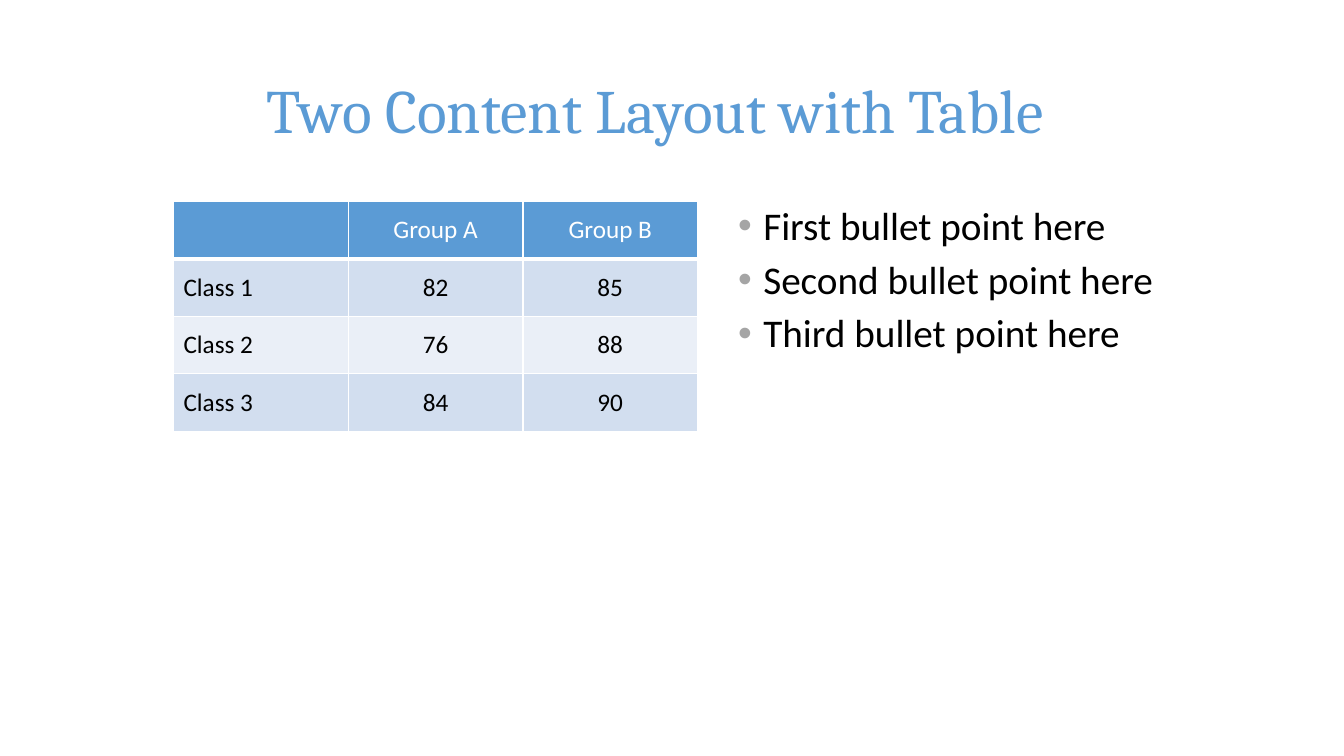
from lxml import etree
from pptx import Presentation
from pptx.dml.color import RGBColor
from pptx.enum.text import MSO_ANCHOR, MSO_AUTO_SIZE, PP_ALIGN
from pptx.oxml.ns import qn
from pptx.util import Inches, Pt

LEFT, CENTER = PP_ALIGN.LEFT, PP_ALIGN.CENTER
MIDDLE, TOP = MSO_ANCHOR.MIDDLE, MSO_ANCHOR.TOP
NO_AUTOFIT = MSO_AUTO_SIZE.NONE

COLORS = {
    "accent": "5B9BD5",
    "band_dark": "D2DEEF",
    "band_light": "EAEFF7",
    "bullet": "A5A5A5",
    "text": "000000",
    "white": "FFFFFF",
}
SCORES = [
    ["", "Group A", "Group B"],
    ["Class 1", "82", "85"],
    ["Class 2", "76", "88"],
    ["Class 3", "84", "90"],
]
BULLETS = [
    "First bullet point here",
    "Second bullet point here",
    "Third bullet point here",
]


def write_text(paragraph, text, size, color="text", font="Calibri", align=LEFT):
    paragraph.text = text
    paragraph.alignment = align
    paragraph.font.name = font
    paragraph.font.size = Pt(size)
    paragraph.font.color.rgb = RGBColor.from_string(COLORS[color])


def place(shape, left, top, width, height, anchor):
    """Move a text placeholder and fix its text frame."""
    shape.left, shape.top = Inches(left), Inches(top)
    shape.width, shape.height = Inches(width), Inches(height)
    shape.text_frame.word_wrap = True
    shape.text_frame.auto_size = NO_AUTOFIT
    shape.text_frame.vertical_anchor = anchor


def add_color(parent, color):
    etree.SubElement(parent, qn("a:srgbClr"), val=COLORS[color])


def add_bullet(paragraph):
    properties = paragraph._p.get_or_add_pPr()
    properties.set("marL", str(Inches(0.25)))
    properties.set("indent", str(Inches(-0.25)))
    add_color(etree.SubElement(properties, qn("a:buClr")), "bullet")
    etree.SubElement(properties, qn("a:buFont"), typeface="Arial")
    etree.SubElement(properties, qn("a:buChar"), char="•")


def fill_title(title):
    place(title, 2.54, 0.4, 9.88, 1.45, MIDDLE)
    paragraph = title.text_frame.paragraphs[0]
    write_text(paragraph, "Two Content Layout with Table", 44, "accent", "Cambria")
    paragraph.line_spacing = 0.9


def fill_bullets(body):
    place(body, 7.22, 2, 5.2, 4.76, TOP)
    frame = body.text_frame
    for index, text in enumerate(BULLETS):
        paragraph = frame.add_paragraph() if index else frame.paragraphs[0]
        add_bullet(paragraph)
        write_text(paragraph, text, 28)
        paragraph.line_spacing = 0.9
        paragraph.space_before = Pt(8 if index else 0)


def add_borders(cell, bottom_width):
    properties = cell._tc.get_or_add_tcPr()
    for position, side in enumerate(("a:lnL", "a:lnR", "a:lnT", "a:lnB")):
        width = Pt(bottom_width if side == "a:lnB" else 1)
        line = etree.Element(qn(side), w=str(width))
        add_color(etree.SubElement(line, qn("a:solidFill")), "white")
        properties.insert(position, line)


def add_score_table(slide):
    table = slide.shapes.add_table(
        len(SCORES), len(SCORES[0]),
        Inches(1.72), Inches(2), Inches(5.2), Inches(0.57 * len(SCORES)),
    ).table
    for row_index, row in enumerate(SCORES):
        header = row_index == 0
        band = "band_dark" if row_index % 2 else "band_light"
        fill = "accent" if header else band
        for column_index, text in enumerate(row):
            cell = table.cell(row_index, column_index)
            cell.fill.solid()
            cell.fill.fore_color.rgb = RGBColor.from_string(COLORS[fill])
            cell.vertical_anchor = MIDDLE
            write_text(cell.text_frame.paragraphs[0], text, 18,
                       color="white" if header else "text",
                       align=CENTER if column_index else LEFT)
            add_borders(cell, 3 if header else 1)


def main():
    presentation = Presentation()
    presentation.slide_width = Inches(13.33)
    presentation.slide_height = Inches(7.5)
    slide = presentation.slides.add_slide(presentation.slide_layouts[1])
    fill_title(slide.shapes.title)
    fill_bullets(slide.placeholders[1])
    add_score_table(slide)
    presentation.save("out.pptx")


if __name__ == "__main__":
    main()
